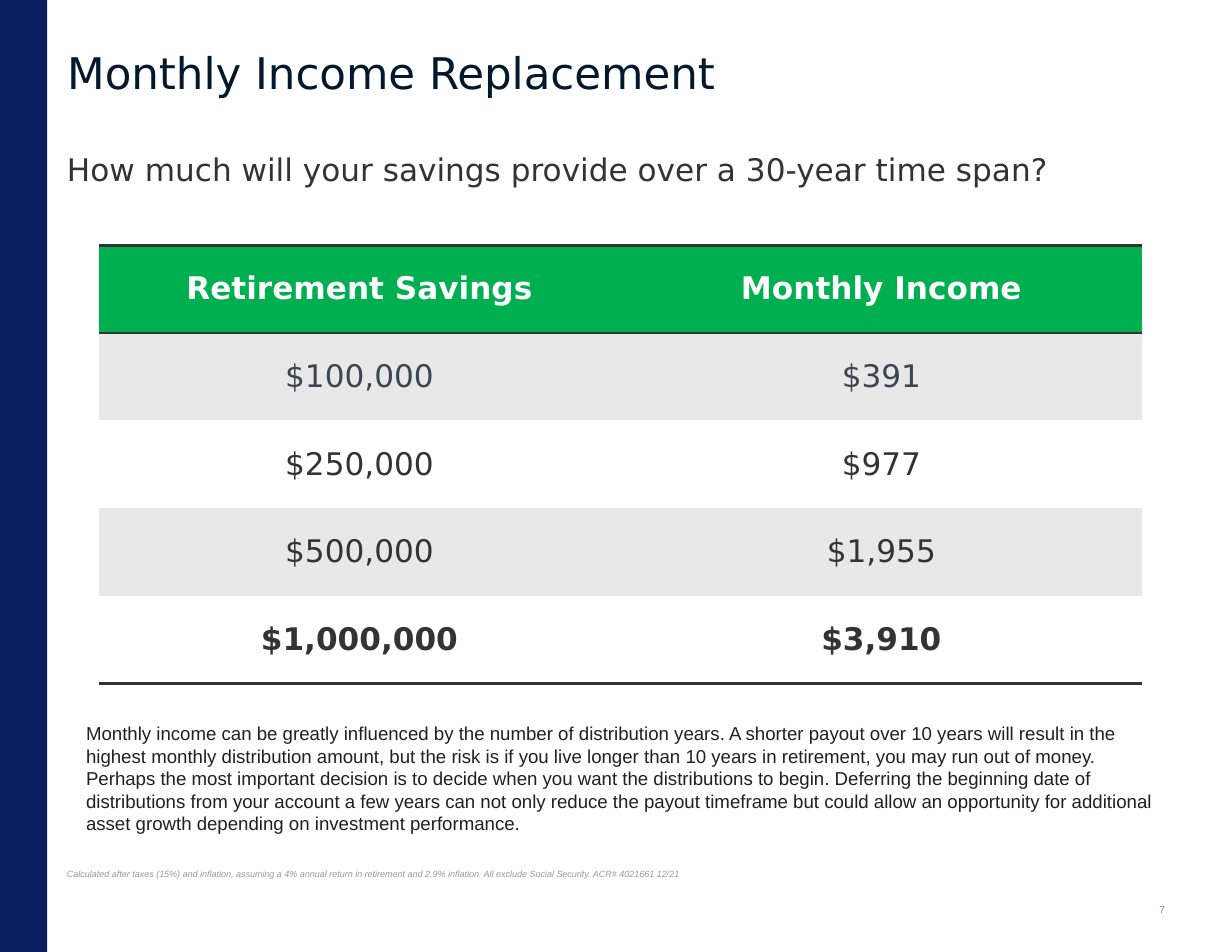
from dataclasses import dataclass

from lxml.etree import SubElement
from pptx import Presentation
from pptx.dml.color import RGBColor
from pptx.enum.shapes import MSO_SHAPE
from pptx.enum.text import MSO_ANCHOR, PP_ALIGN
from pptx.oxml.ns import qn
from pptx.util import Inches, Pt

RECT = MSO_SHAPE.RECTANGLE
TOP, MIDDLE, BOTTOM = MSO_ANCHOR.TOP, MSO_ANCHOR.MIDDLE, MSO_ANCHOR.BOTTOM
LEFT, CENTER, RIGHT = PP_ALIGN.LEFT, PP_ALIGN.CENTER, PP_ALIGN.RIGHT


@dataclass(frozen=True)
class Theme:
    """Hold the fonts, colours and type sizes."""
    head: str = "DejaVu Sans"
    body: str = "Arial"
    navy: str = "0A1F62"
    title: str = "03182A"
    dark: str = "323332"
    slate: str = "3C4652"
    ink: str = "231F20"
    note: str = "9A999A"
    page: str = "838683"
    green: str = "00B050"
    band: str = "E8E8E8"
    white: str = "FFFFFF"
    title_size: float = 28
    large: float = 20
    text_size: float = 12
    page_size: float = 6.5
    note_size: float = 5.8
    rule: float = 2


THEME = Theme()

ROWS = [
    ("Retirement Savings", "Monthly Income"),
    ("$100,000", "$391"),
    ("$250,000", "$977"),
    ("$500,000", "$1,955"),
    ("$1,000,000", "$3,910"),
]

ADVICE = (
    "Monthly income can be greatly influenced by the number of distribution years. "
    "A shorter payout over 10 years will result in the highest monthly distribution "
    "amount, but the risk is if you live longer than 10 years in retirement, you may "
    "run out of money. Perhaps the most important decision is to decide when you want "
    "the distributions to begin. Deferring the beginning date of distributions from "
    "your account a few years can not only reduce the payout timeframe but could allow "
    "an opportunity for additional asset growth depending on investment performance."
)

NOTE = (
    "Calculated after taxes (15%) and inflation, assuming a 4% annual return in "
    "retirement and 2.9% inflation. All exclude Social Security. ACR# 4021661 12/21"
)


def style(frame, text, font, size, color, align=LEFT, bold=False, italic=False):
    """Write one paragraph and format its run."""
    frame.text = text
    para = frame.paragraphs[0]
    para.alignment = align
    face = para.runs[0].font
    face.name, face.size = font, Pt(size)
    face.bold, face.italic = bold, italic
    face.color.rgb = RGBColor.from_string(color)


def add_bar(slide, height):
    """Draw the navy bar down the left edge."""
    bar = slide.shapes.add_shape(RECT, 0, 0, Inches(0.42), height)
    bar.shadow.inherit = False
    bar.fill.solid()
    bar.fill.fore_color.rgb = RGBColor.from_string(THEME.navy)
    bar.line.fill.background()


def add_title(slide, text):
    """Place and format the title."""
    title = slide.shapes.title
    title.left, title.top = Inches(0.5), Inches(0.46)
    title.width, title.height = Inches(10), Inches(0.42)
    frame = title.text_frame
    frame.vertical_anchor = MIDDLE
    style(frame, text, THEME.head, THEME.title_size, THEME.title)
    frame.paragraphs[0].line_spacing = 0.9


def add_text(slide, box, text, font, size, color, anchor=TOP, **look):
    """Add a wrapped text box."""
    frame = slide.shapes.add_textbox(*map(Inches, box)).text_frame
    frame.word_wrap = True
    frame.vertical_anchor = anchor
    style(frame, text, font, size, color, **look)


def set_edges(cell, ruled):
    """Draw the ruled sides of a cell and clear the others."""
    props = cell._tc.get_or_add_tcPr()
    for side in "LRTB":
        line = SubElement(props, qn(f"a:ln{side}"), w=str(Pt(THEME.rule)))
        if side in ruled:
            fill = SubElement(line, qn("a:solidFill"))
            SubElement(fill, qn("a:srgbClr"), val=THEME.dark)
        else:
            SubElement(line, qn("a:noFill"))


def row_look(row, last):
    """Give the fill, text colour and ruled sides of a row."""
    if row == 0:
        return THEME.green, THEME.white, "TB"
    fill = THEME.band if row % 2 else THEME.white
    color = THEME.slate if row == 1 else THEME.dark
    ruled = "T" if row == 1 else "B" if row == last else ""
    return fill, color, ruled


def add_grid(slide, rows):
    """Add the table of savings and income."""
    box = map(Inches, (0.88, 2.19, 9.32, 3.91))
    table = slide.shapes.add_table(len(rows), len(rows[0]), *box).table
    table.horz_banding = False
    last = len(rows) - 1
    for row, texts in enumerate(rows):
        fill, color, ruled = row_look(row, last)
        for col, text in enumerate(texts):
            cell = table.cell(row, col)
            set_edges(cell, ruled)
            cell.fill.solid()
            cell.fill.fore_color.rgb = RGBColor.from_string(fill)
            cell.vertical_anchor = MIDDLE
            style(cell.text_frame, text, THEME.head, THEME.large, color,
                  align=CENTER, bold=row in (0, last))


def main():
    """Build and save the slide."""
    deck = Presentation()
    deck.slide_width, deck.slide_height = Inches(11), Inches(8.5)
    slide = deck.slides.add_slide(deck.slide_layouts[5])
    add_bar(slide, deck.slide_height)
    add_title(slide, "Monthly Income Replacement")
    add_text(slide, (0.5, 1.29, 10, 0.56),
             "How much will your savings provide over a 30-year time span?",
             THEME.head, THEME.large, THEME.dark)
    add_text(slide, (0.5, 7.57, 10, 0.33), NOTE,
             THEME.body, THEME.note_size, THEME.note, BOTTOM, italic=True)
    add_text(slide, (10, 7.93, 0.5, 0.38), "7",
             THEME.body, THEME.page_size, THEME.page, MIDDLE, align=RIGHT)
    add_grid(slide, ROWS)
    add_text(slide, (0.67, 6.4, 9.83, 1.11), ADVICE,
             THEME.body, THEME.text_size, THEME.ink)
    deck.save("out.pptx")


if __name__ == "__main__":
    main()
